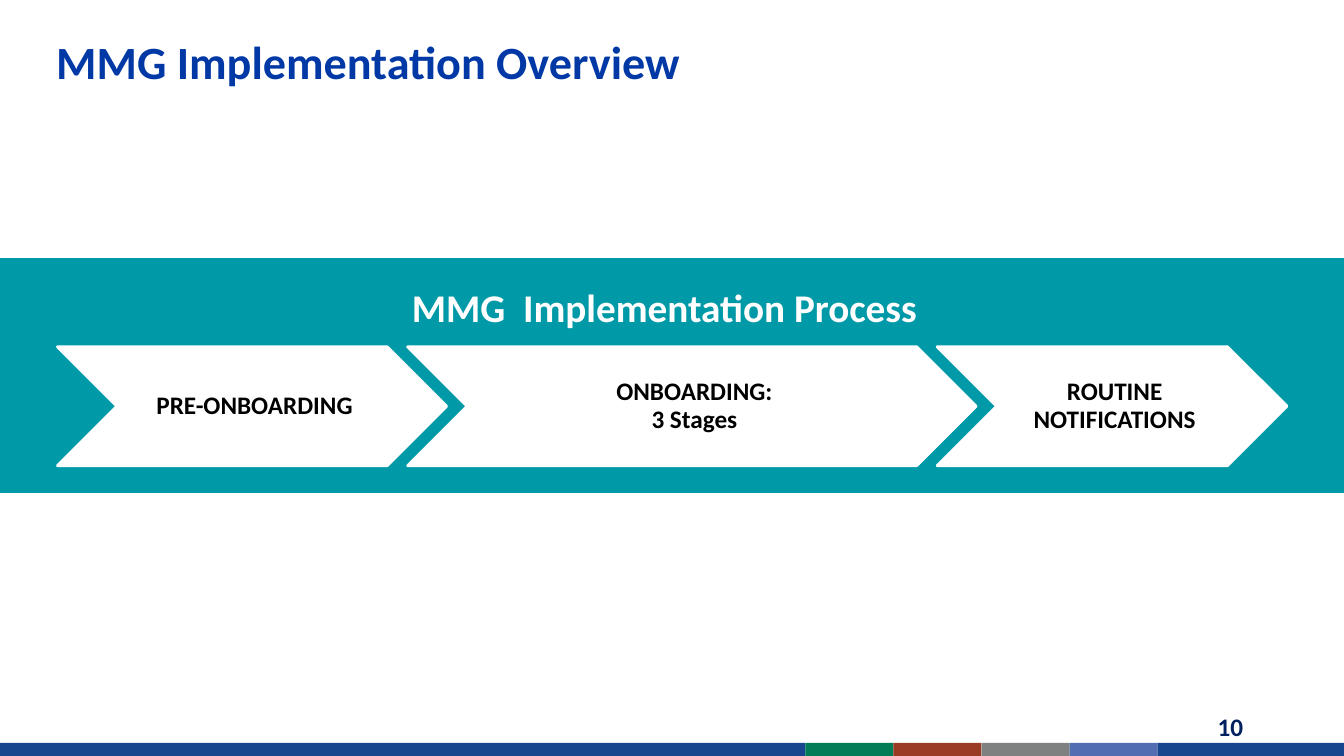
from dataclasses import dataclass, field

from pptx import Presentation
from pptx.dml.color import RGBColor
from pptx.enum.shapes import MSO_SHAPE
from pptx.enum.text import MSO_ANCHOR, PP_ALIGN
from pptx.util import Inches, Pt

RECTANGLE, CHEVRON = MSO_SHAPE.RECTANGLE, MSO_SHAPE.CHEVRON
LEFT, CENTER, RIGHT = PP_ALIGN.LEFT, PP_ALIGN.CENTER, PP_ALIGN.RIGHT
MIDDLE, BOTTOM = MSO_ANCHOR.MIDDLE, MSO_ANCHOR.BOTTOM

COLORS = {
    "white": "FFFFFF", "black": "000000", "teal": "0099A7",
    "title": "0039A6", "navy": "002060", "blue": "17468F",
    "green": "007D57", "red": "993B25", "gray": "7F8080", "periwinkle": "536DB3",
}
FONT = "Calibri"
LABEL_MARGINS = {
    "margin_left": Inches(0.08), "margin_right": Inches(0.03),
    "margin_top": Inches(0.03), "margin_bottom": Inches(0.03),
}

deck = Presentation()
deck.slide_width, deck.slide_height = Inches(13.33), Inches(7.5)
slide = deck.slides.add_slide(deck.slide_layouts[6])


@dataclass(frozen=True)
class Area:
    """A place in percent of the slide's width and height."""
    left: float
    top: float
    width: float
    height: float

    def emu(self) -> tuple[int, ...]:
        sides = (deck.slide_width, deck.slide_height) * 2
        shares = (self.left, self.top, self.width, self.height)
        return tuple(round(side * share / 100) for side, share in zip(sides, shares))


@dataclass(frozen=True)
class Caption:
    words: str
    size: float
    color: str
    align: int = CENTER
    anchor: int = MIDDLE
    spacing: float | Pt = 0.9
    margins: dict[str, int] = field(default_factory=dict)


@dataclass(frozen=True)
class Step:
    words: str
    width: float


@dataclass(frozen=True)
class Stripe:
    color: str
    width: float


def rgb(name: str) -> RGBColor:
    return RGBColor.from_string(COLORS[name])


def draw_block(kind: int, area: Area, color: str, outlined: bool = True) -> None:
    block = slide.shapes.add_shape(kind, *area.emu())
    block.shadow.inherit = False
    block.fill.solid()
    block.fill.fore_color.rgb = rgb(color)
    if outlined:
        block.line.color.rgb = rgb(color)
        block.line.width = Pt(2)
    else:
        block.line.fill.background()


def write(area: Area, caption: Caption) -> None:
    frame = slide.shapes.add_textbox(*area.emu()).text_frame
    frame_format = {"word_wrap": True, "vertical_anchor": caption.anchor, **caption.margins}
    for attribute, value in frame_format.items():
        setattr(frame, attribute, value)
    paragraph = frame.paragraphs[0]
    paragraph.text = caption.words
    paragraph.alignment = caption.align
    paragraph.line_spacing = caption.spacing
    for run in paragraph.runs:
        for attribute, value in {"name": FONT, "size": Pt(caption.size), "bold": True}.items():
            setattr(run.font, attribute, value)
        run.font.color.rgb = rgb(caption.color)


def draw_footer(stripes: list[Stripe]) -> None:
    left = 0.0
    for stripe in stripes:
        draw_block(RECTANGLE, Area(left, 98.27, stripe.width, 1.73), stripe.color, outlined=False)
        left += stripe.width


def draw_steps(steps: list[Step]) -> None:
    """Chain the chevrons, each reaching into the notch of the next."""
    left, top, height = 4.28, 45.87, 15.73
    overlap, notch = 2.9, 4.43
    for step in steps:
        draw_block(CHEVRON, Area(left, top, step.width, height), "white")
        write(
            Area(left + notch, top, step.width - 2 * notch, height),
            Caption(step.words, 18, "black", margins=LABEL_MARGINS),
        )
        left += step.width - overlap


def main() -> None:
    draw_footer([
        Stripe("blue", 59.93),
        *(Stripe(color, 6.55) for color in ("green", "red", "gray", "periwinkle")),
        Stripe("blue", 13.87),
    ])
    draw_block(RECTANGLE, Area(0, 34.27, 100, 30.8), "teal")
    write(
        Area(28.13, 35.2, 42.6, 10.67),
        Caption("MMG  Implementation Process", 28, "white", spacing=1.0),
    )
    draw_steps([
        Step("PRE-ONBOARDING", 28.95),
        Step("ONBOARDING:\v3 Stages", 42.3),
        Step("ROUTINE NOTIFICATIONS", 26.03),
    ])
    write(Area(70.73, 93.73, 22.5, 5.33), Caption("10", 18, "navy", RIGHT))
    write(
        Area(3.45, 2.27, 84.83, 10.13),
        Caption("MMG Implementation Overview", 33, "title", LEFT, BOTTOM, Pt(40)),
    )
    deck.save("out.pptx")


if __name__ == "__main__":
    main()
